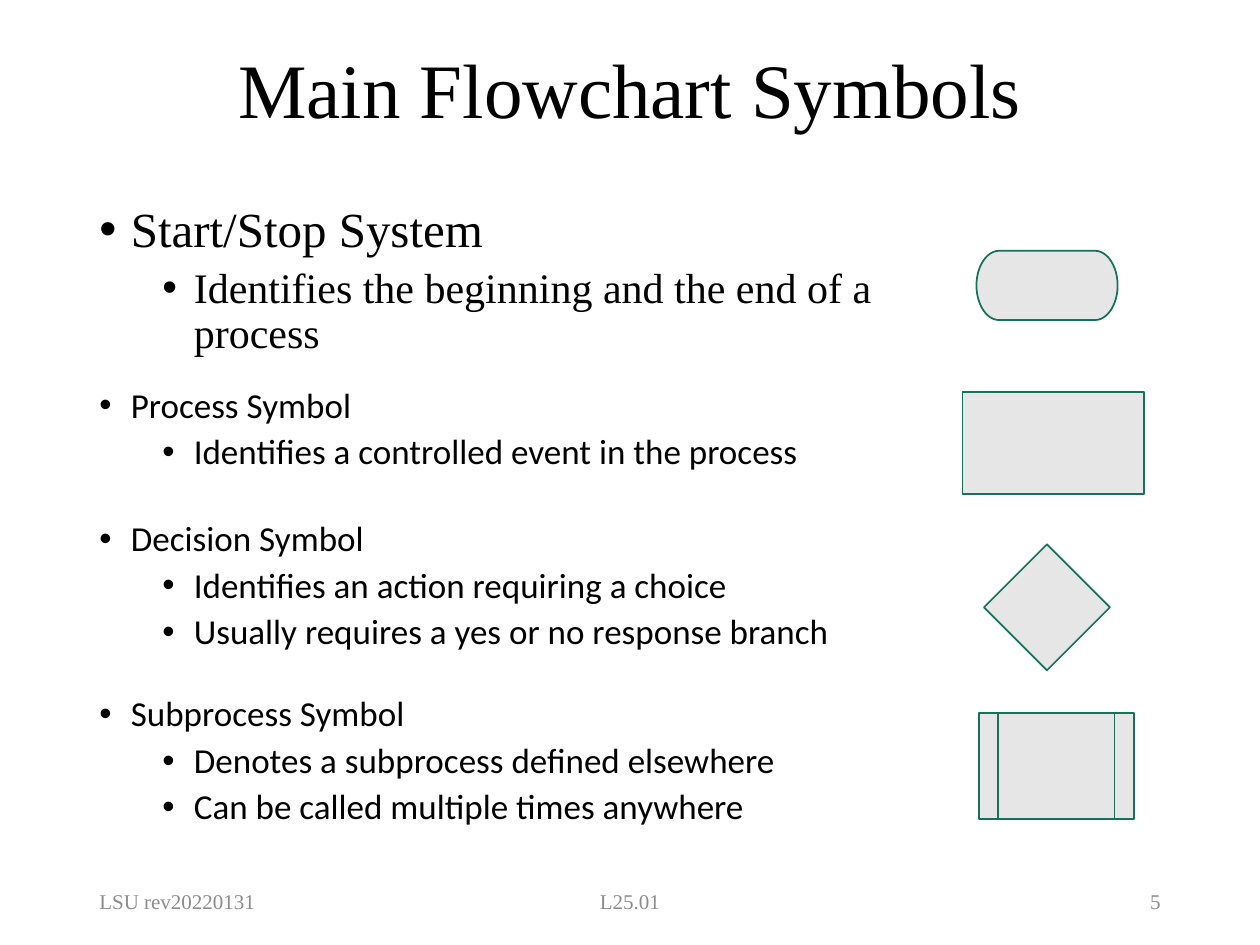
from dataclasses import dataclass

from lxml.etree import SubElement
from pptx import Presentation
from pptx.dml.color import RGBColor
from pptx.enum.shapes import MSO_SHAPE as Preset
from pptx.enum.text import MSO_ANCHOR as Anchor, PP_ALIGN as Align
from pptx.oxml.ns import qn
from pptx.util import Inches, Pt


@dataclass(frozen=True)
class Theme:
    serif: str = "Times New Roman"
    sans: str = "Calibri"
    ink: RGBColor = RGBColor(0x00, 0x00, 0x00)
    muted: RGBColor = RGBColor(0x8C, 0x8C, 0x8C)
    symbol_fill: RGBColor = RGBColor(0xE7, 0xE6, 0xE6)
    symbol_line: RGBColor = RGBColor(0x15, 0x72, 0x59)
    title_size: int = 44
    lead_size: int = 28
    lead_detail_size: int = 24
    body_size: int = 20
    footer_size: int = 12


THEME = Theme()
LEFT = 0.69
LINE_SPACING = 0.9


def add_box(page, left, top, width, height, anchor=Anchor.TOP):
    """Add an empty wrapping text box and return its text frame."""
    box = page.shapes.add_textbox(
        Inches(left), Inches(top), Inches(width), Inches(height))
    frame = box.text_frame
    frame.word_wrap = True
    frame.vertical_anchor = anchor
    return frame


def add_span(para, text, font, size, color):
    span = para.add_run()
    span.text = text
    span.font.name = font
    span.font.size = Pt(size)
    span.font.color.rgb = color


def set_bullet(para, level):
    """Give a paragraph a hanging bullet at the indent of its level."""
    para.level = level
    props = para._p.get_or_add_pPr()
    props.set("marL", str(Inches(0.25 + 0.5 * level)))
    props.set("indent", str(Inches(-0.25)))
    SubElement(props, qn("a:buFont"), typeface="Arial")
    SubElement(props, qn("a:buChar"), char="•")


def add_title(page, text):
    para = add_box(page, 1.46, 0.02, 7.08, 1.45, Anchor.MIDDLE).paragraphs[0]
    para.alignment = Align.CENTER
    para.line_spacing = LINE_SPACING
    add_span(para, text, THEME.serif, THEME.title_size, THEME.ink)


def add_description(page, top, width, height, heading, details,
                    font=THEME.sans, sizes=(THEME.body_size, THEME.body_size)):
    """Add a symbol's name with its meaning as second-level bullets."""
    frame = add_box(page, LEFT, top, width, height)
    for index, text in enumerate([heading, *details]):
        level = min(index, 1)
        para = frame.add_paragraph() if index else frame.paragraphs[0]
        set_bullet(para, level)
        para.line_spacing = LINE_SPACING
        if index:
            para.space_before = Pt(5)
        add_span(para, text, font, sizes[level], THEME.ink)


def add_symbol(page, preset, left, top, width, height):
    symbol = page.shapes.add_shape(
        preset, Inches(left), Inches(top), Inches(width), Inches(height))
    symbol.shadow.inherit = False
    symbol.fill.solid()
    symbol.fill.fore_color.rgb = THEME.symbol_fill
    symbol.line.color.rgb = THEME.symbol_line
    symbol.line.width = Pt(1)


def add_footer(page, left, width, text, alignment):
    para = add_box(page, left, 6.95, width, 0.4, Anchor.MIDDLE).paragraphs[0]
    para.alignment = alignment
    add_span(para, text, THEME.serif, THEME.footer_size, THEME.muted)


def main():
    deck = Presentation()
    deck.slide_width, deck.slide_height = Inches(10), Inches(7.5)
    page = deck.slides.add_slide(deck.slide_layouts[6])

    add_title(page, "Main Flowchart Symbols")

    # Names and meanings
    add_description(page, 1.58, 6.45, 1.45, "Start/Stop System",
                    ["Identifies the beginning and the end of a process"],
                    THEME.serif, (THEME.lead_size, THEME.lead_detail_size))
    add_description(page, 3.03, 7, 1.28, "Process Symbol",
                    ["Identifies a controlled event in the process"])
    add_description(page, 4.09, 8.62, 1.39, "Decision Symbol",
                    ["Identifies an action requiring a choice",
                     "Usually requires a yes or no response branch"])
    add_description(page, 5.48, 8.62, 1.39, "Subprocess Symbol",
                    ["Denotes a subprocess defined elsewhere",
                     "Can be called multiple times anywhere"])

    # Flowchart symbols
    add_symbol(page, Preset.FLOWCHART_TERMINATOR, 7.75, 1.99, 1.12, 0.55)
    add_symbol(page, Preset.RECTANGLE, 7.64, 3.11, 1.44, 0.81)
    add_symbol(page, Preset.DIAMOND, 7.81, 4.32, 1, 1)
    add_symbol(page, Preset.FLOWCHART_PREDEFINED_PROCESS,
               7.77, 5.66, 1.23, 0.84)

    # Footer
    add_footer(page, LEFT, 2.25, "LSU rev20220131", Align.LEFT)
    add_footer(page, 3.31, 3.38, "L25.01", Align.CENTER)
    add_footer(page, 7.06, 2.25, "5", Align.RIGHT)

    deck.save("out.pptx")


if __name__ == "__main__":
    main()
